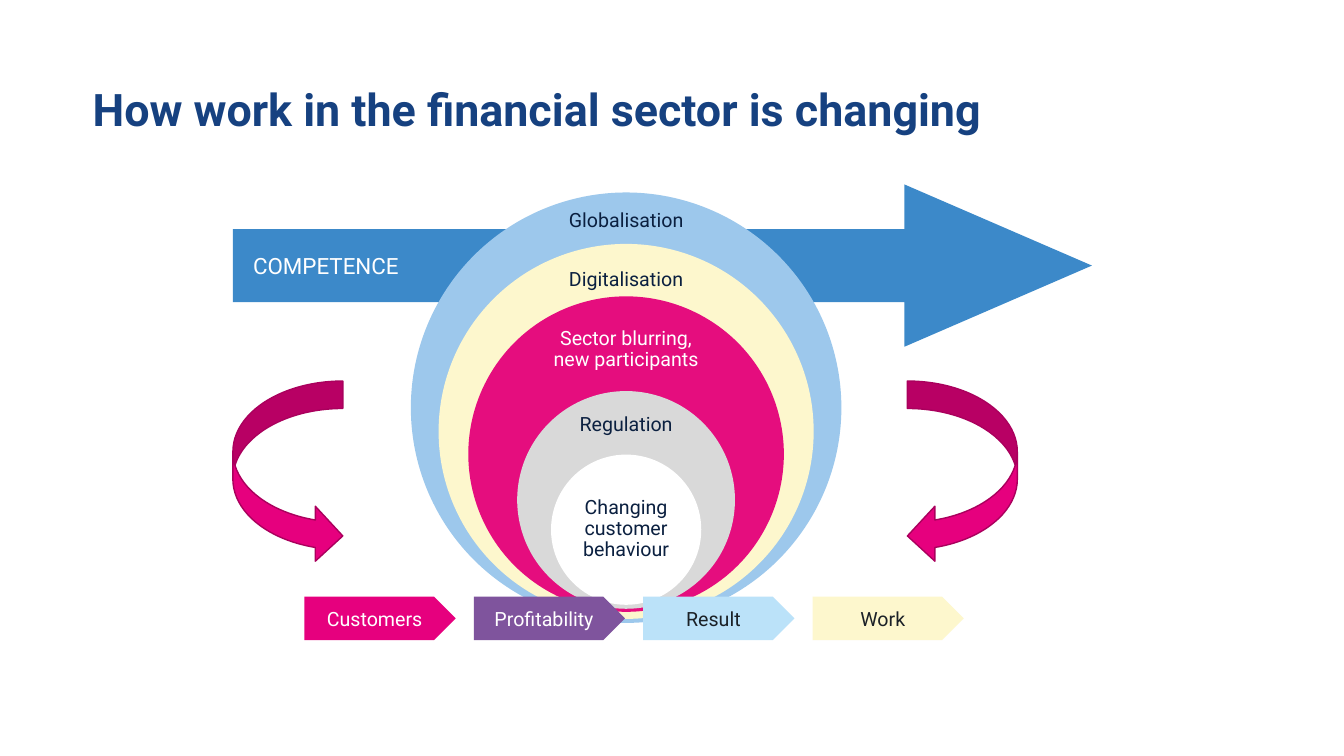
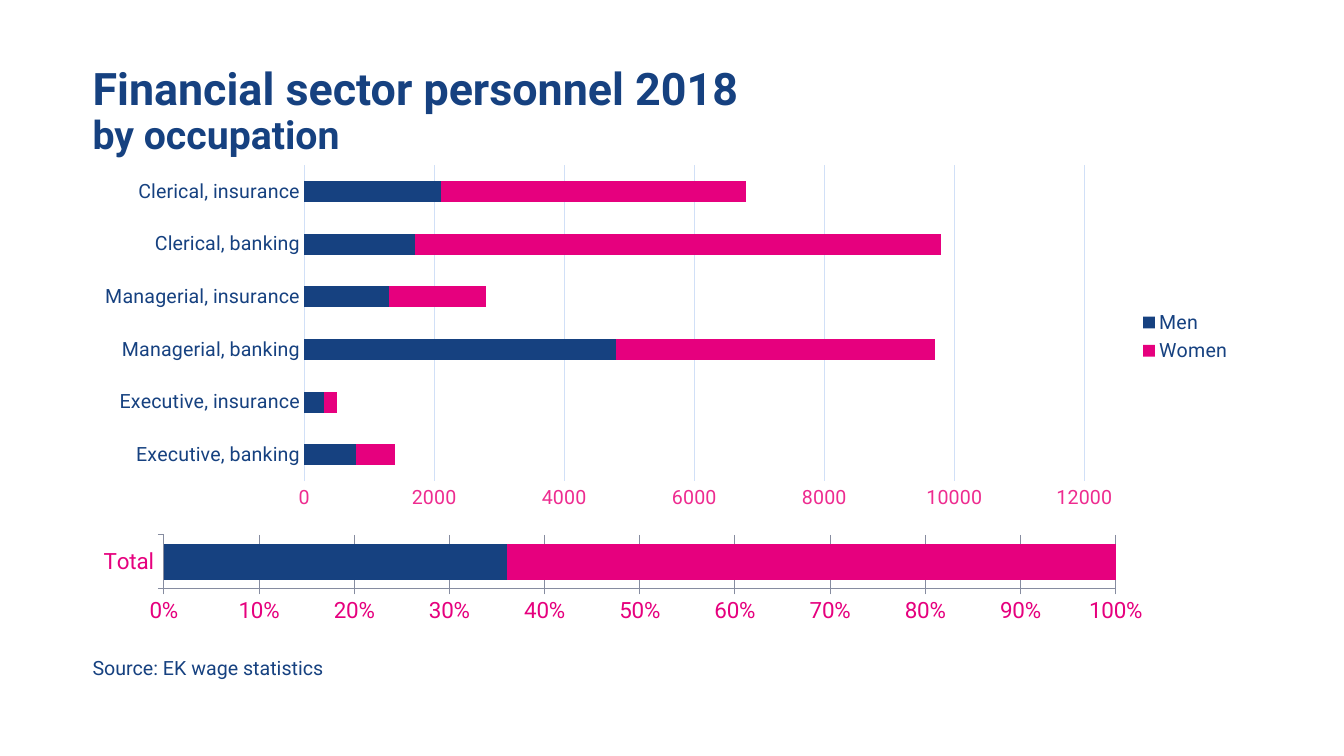
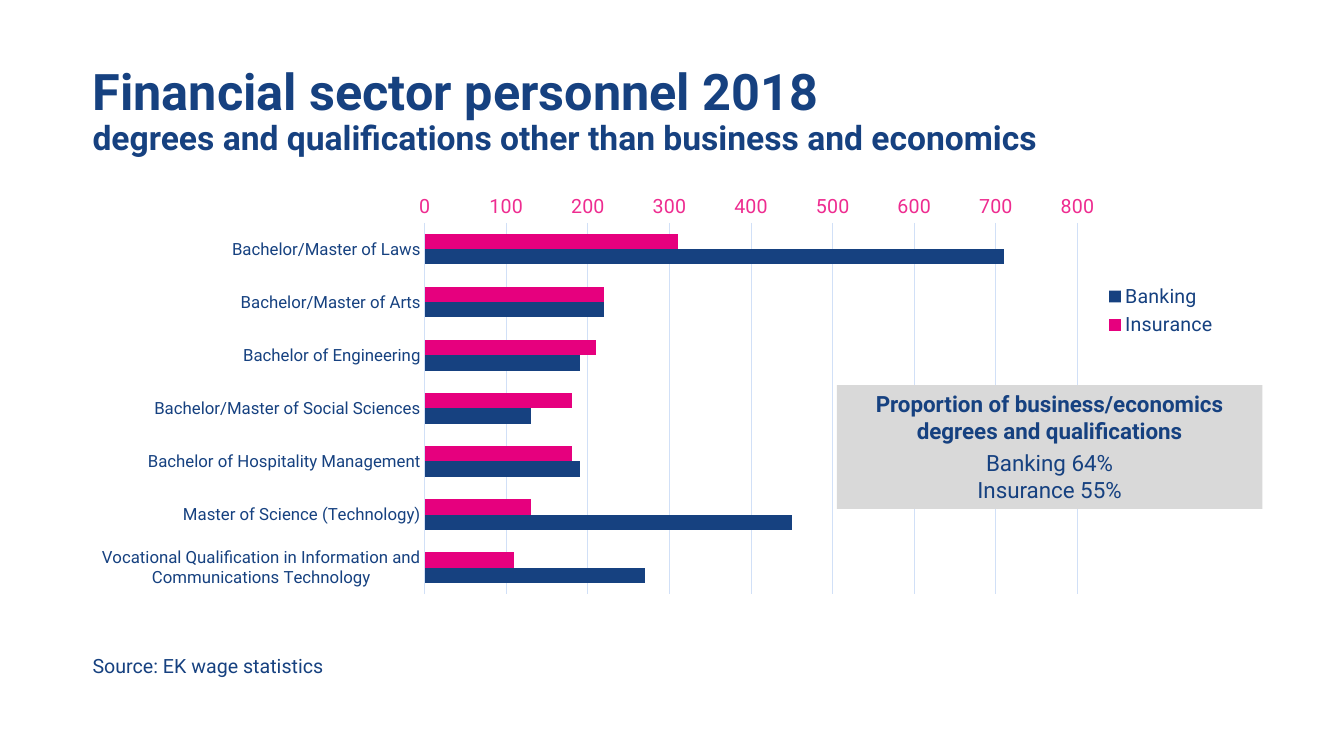
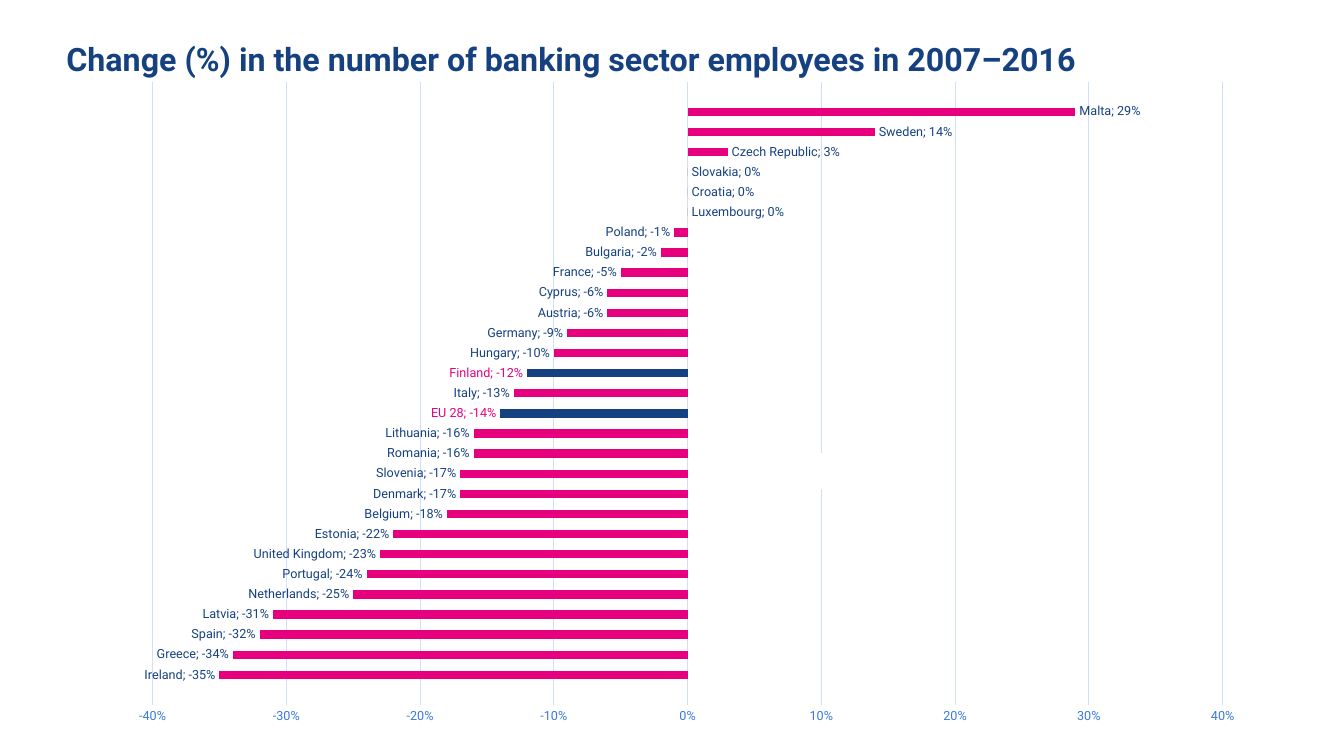
import pptx
import pptx.chart.data
import pptx.dml.color
import pptx.enum.chart
import pptx.enum.shapes
import pptx.enum.text
import pptx.oxml.xmlchemy
import pptx.util

Inches = pptx.util.Inches
Pt = pptx.util.Pt
RGBColor = pptx.dml.color.RGBColor
Shape = pptx.enum.shapes.MSO_SHAPE
Anchor = pptx.enum.text.MSO_ANCHOR
Align = pptx.enum.text.PP_ALIGN
ChartType = pptx.enum.chart.XL_CHART_TYPE
TickMark = pptx.enum.chart.XL_TICK_MARK
OUTSIDE_END = pptx.enum.chart.XL_LABEL_POSITION.OUTSIDE_END

# Shared style
FONT = "Roboto"
NAVY = RGBColor(0x16, 0x41, 0x80)
PINK = RGBColor(0xE6, 0x00, 0x7E)
DARK_PINK = RGBColor(0xAA, 0x00, 0x5D)
RING_PINK = RGBColor(0xE5, 0x0D, 0x7E)
AXIS_PINK = RGBColor(0xEE, 0x2C, 0x90)
AXIS_BLUE = RGBColor(0x37, 0x7A, 0xDD)
ARROW_BLUE = RGBColor(0x3C, 0x89, 0xC9)
SKY = RGBColor(0x9D, 0xC8, 0xEC)
PALE_BLUE = RGBColor(0xBB, 0xE2, 0xF9)
CREAM = RGBColor(0xFD, 0xF7, 0xCD)
PURPLE = RGBColor(0x7F, 0x54, 0x9D)
GREY = RGBColor(0xD9, 0xD9, 0xD9)
AXIS_GREY = RGBColor(0x86, 0x8C, 0xA0)
GRID = RGBColor(0xD1, 0xE0, 0xF7)
INK = RGBColor(0x0B, 0x20, 0x40)
BLACK = RGBColor(0x1B, 0x21, 0x27)
WHITE = RGBColor(0xFF, 0xFF, 0xFF)


def style_font(font, size, color, bold=False):
    font.name = FONT
    font.size = Pt(size)
    font.bold = bold
    font.color.rgb = color


def write_lines(paragraph, lines, color, align=Align.LEFT):
    """Write (text, size, bold) lines into one paragraph, with line breaks."""
    paragraph.alignment = align
    for index, (text, size, bold) in enumerate(lines):
        if index:
            paragraph.add_line_break()
        run = paragraph.add_run()
        run.text = text
        style_font(run.font, size, color, bold)


def add_text(slide, box, lines, color=NAVY, align=Align.LEFT,
             anchor=Anchor.TOP, spacing=1.0, inset=0.1):
    shape = slide.shapes.add_textbox(*map(Inches, box))
    frame = shape.text_frame
    frame.word_wrap = True
    frame.vertical_anchor = anchor
    frame.margin_left = frame.margin_right = Inches(inset)
    paragraph = frame.paragraphs[0]
    paragraph.line_spacing = spacing
    write_lines(paragraph, lines, color, align)


def add_title(slide, *lines, box=(0.82, 0.39, 11.5, 1.45)):
    add_text(slide, box, [(text, size, True) for text, size in lines],
             anchor=Anchor.MIDDLE, spacing=0.9)


def add_source(slide, top):
    add_text(slide, (0.82, top, 3, 0.34), [("Source: EK wage statistics", 14, False)])


def add_shape(slide, kind, box, fill, line=None):
    shape = slide.shapes.add_shape(kind, *map(Inches, box))
    shape.shadow.inherit = False
    shape.fill.solid()
    shape.fill.fore_color.rgb = fill
    if line is None:
        shape.line.fill.background()
    else:
        shape.line.color.rgb = line
        shape.line.width = Pt(1)
    return shape


# Charts
def add_xml_child(parent, tag, value):
    child = pptx.oxml.xmlchemy.OxmlElement(tag)
    child.set("val", str(value))
    parent.append(child)


def set_layout(element, position, fractions, inner=True):
    """Place a plot area or legend by fractions of the chart's size."""
    for old in element.xpath("c:layout"):
        element.remove(old)
    layout = pptx.oxml.xmlchemy.OxmlElement("c:layout")
    manual = pptx.oxml.xmlchemy.OxmlElement("c:manualLayout")
    layout.append(manual)
    if inner:
        add_xml_child(manual, "c:layoutTarget", "inner")
    for mode in ("xMode", "yMode"):
        add_xml_child(manual, "c:" + mode, "edge")
    for side, fraction in zip("xywh", fractions):
        add_xml_child(manual, "c:" + side, fraction)
    element.insert(position, layout)


def add_bar_chart(slide, kind, box, categories, series, plot_box, gap, overlap,
                  number_format="General"):
    """Add a bar chart; series holds (name, values, color)."""
    data = pptx.chart.data.CategoryChartData(number_format=number_format)
    data.categories = categories
    for name, values, _ in series:
        data.add_series(name, values)
    chart = slide.shapes.add_chart(kind, *map(Inches, box), data).chart
    chart.has_title = False
    chart.has_legend = False
    style_font(chart.font, 14, NAVY)
    plot = chart.plots[0]
    plot.vary_by_categories = False
    plot.gap_width = gap
    plot.overlap = overlap
    for drawn, (_, _, color) in zip(plot.series, series):
        drawn.invert_if_negative = False
        drawn.format.fill.solid()
        drawn.format.fill.fore_color.rgb = color
    set_layout(chart._chartSpace.xpath("c:chart/c:plotArea")[0], 0, plot_box)
    return chart


def style_axis(axis, size, color, line=None, tick=TickMark.NONE):
    axis.major_tick_mark = tick
    axis.minor_tick_mark = TickMark.NONE
    style_font(axis.tick_labels.font, size, color)
    if line is None:
        axis.format.line.fill.background()
    else:
        axis.format.line.color.rgb = line
        axis.format.line.width = Pt(0.75)


def style_value_axis(axis, size, color, step, limits=None, grid=GRID,
                     number_format="General", **style):
    style_axis(axis, size, color, **style)
    axis.major_unit = step
    if limits:
        axis.minimum_scale, axis.maximum_scale = limits
    axis.tick_labels.number_format = number_format
    axis.tick_labels.number_format_is_linked = False
    axis.has_major_gridlines = True
    axis.major_gridlines.format.line.color.rgb = grid
    axis.major_gridlines.format.line.width = Pt(0.75)


def add_legend(chart):
    chart.has_legend = True
    chart.legend.position = pptx.enum.chart.XL_LEGEND_POSITION.RIGHT
    chart.legend.include_in_layout = False
    style_font(chart.legend.font, 14, NAVY)
    return chart.legend


# Slide 1: nested rings of change
RING_CENTER = 6.21
RINGS = [  # label, top, diameter, label centre, label width, fill, text colour
    ("Globalisation", 1.91, 4.27, 2.19, 1.62, SKY, INK),
    ("Digitalisation", 2.42, 3.72, 2.78, 1.62, CREAM, INK),
    ("Sector blurring, new participants", 2.94, 3.13, 3.47, 1.62, RING_PINK, WHITE),
    ("Regulation", 3.88, 2.16, 4.22, 1.62, GREY, INK),
    ("Changing customer behaviour", 4.51, 1.49, 5.25, 1.01, WHITE, INK),
]
STEPS = [("Customers", PINK, WHITE), ("Profitability", PURPLE, WHITE),
         ("Result", PALE_BLUE, BLACK), ("Work", CREAM, BLACK)]


def add_ring(slide, label, top, diameter, label_center, label_width, fill, color):
    left = RING_CENTER - diameter / 2
    add_shape(slide, Shape.OVAL, (left, top, diameter, diameter), fill)
    add_text(slide, (RING_CENTER - label_width / 2, label_center - 0.4, label_width, 0.8),
             [(label, 14, False)], color, Align.CENTER, Anchor.MIDDLE, 0.9, 0)


def build_change_slide(slide):
    add_title(slide, ("How work in the financial sector is changing", 32))
    arrow = add_shape(slide, Shape.RIGHT_ARROW, (2.31, 1.83, 8.52, 1.61), ARROW_BLUE)
    arrow.adjustments[0] = 0.45
    arrow.adjustments[1] = 1.155
    arrow.text_frame.margin_left = Inches(0.2)
    write_lines(arrow.text_frame.paragraphs[0], [("COMPETENCE", 16, False)], WHITE)
    for ring in RINGS:
        add_ring(slide, *ring)
    for left, flipped in ((2.31, False), (9, True)):
        curve = add_shape(slide, Shape.CURVED_RIGHT_ARROW, (left, 3.78, 1.09, 1.81),
                          PINK, DARK_PINK)
        if flipped:
            curve._element.spPr.xfrm.set("flipH", "1")
    for index, (label, fill, color) in enumerate(STEPS):
        step = add_shape(slide, Shape.PENTAGON, (3.02 + 1.68 * index, 5.92, 1.5, 0.43), fill)
        write_lines(step.text_frame.paragraphs[0], [(label, 14, False)], color, Align.CENTER)


# Slide 2: personnel by occupation
OCCUPATIONS = ["Executive, banking", "Executive, insurance", "Managerial, banking",
               "Managerial, insurance", "Clerical, banking", "Clerical, insurance"]


def build_occupation_slide(slide):
    add_title(slide, ("Financial sector personnel 2018", 32), ("by occupation", 28))
    staff = add_bar_chart(
        slide, ChartType.BAR_STACKED, (0.82, 1.56, 11.5, 3.56), OCCUPATIONS,
        [("Men", (800, 300, 4800, 1300, 1700, 2100), NAVY),
         ("Women", (600, 200, 4900, 1500, 8100, 4700), PINK)],
        (0.191, 0.022, 0.673, 0.881), gap=150, overlap=100)
    style_axis(staff.category_axis, 14, NAVY, GRID)
    style_value_axis(staff.value_axis, 14, AXIS_PINK, 2000, (0, 12000))
    add_legend(staff)

    total = add_bar_chart(
        slide, ChartType.BAR_STACKED_100, (0.82, 5.29, 10.74, 0.92), ["Total"],
        [("Men", (36,), NAVY), ("Women", (64,), PINK)],
        (0.075, 0.019, 0.879, 0.577), gap=50, overlap=100)
    ticks = {"line": AXIS_GREY, "tick": TickMark.OUTSIDE}
    style_axis(total.category_axis, 16, PINK, **ticks)
    style_value_axis(total.value_axis, 16, PINK, 0.1, grid=AXIS_GREY,
                     number_format="0%", **ticks)
    add_source(slide, 6.46)


# Slide 3: personnel by degree
DEGREES = ["Bachelor/Master of Laws", "Bachelor/Master of Arts", "Bachelor of Engineering",
           "Bachelor/Master of Social Sciences", "Bachelor of Hospitality Management",
           "Master of Science (Technology)",
           "Vocational Qualification in Information and Communications Technology"]


def build_degree_slide(slide):
    add_title(slide, ("Financial sector personnel 2018", 36),
              ("degrees and qualifications other than business and economics", 24))
    chart = add_bar_chart(
        slide, ChartType.BAR_CLUSTERED, (0.82, 1.75, 11.5, 4.3), DEGREES,
        [("Insurance", (310, 220, 210, 180, 180, 130, 110), PINK),
         ("Banking", (710, 220, 190, 130, 190, 450, 270), NAVY)],
        (0.295, 0.107, 0.563, 0.857), gap=150, overlap=0)
    chart.category_axis.reverse_order = True
    style_axis(chart.category_axis, 12, NAVY, GRID)
    style_value_axis(chart.value_axis, 14, AXIS_PINK, 100, (0, 800))
    legend = add_legend(chart)
    set_layout(legend._element, 1, (0.875, 0.24, 0.11, 0.14), inner=False)
    add_source(slide, 6.44)

    # Note on business degrees
    note = add_shape(slide, Shape.RECTANGLE, (8.3, 3.82, 4.22, 1.23), GREY)
    frame = note.text_frame
    frame.word_wrap = True
    frame.vertical_anchor = Anchor.TOP
    heading = frame.paragraphs[0]
    heading.space_after = Pt(4)
    write_lines(heading, [("Proportion of business/economics degrees and qualifications",
                           16, True)], NAVY, Align.CENTER)
    write_lines(frame.add_paragraph(), [("Banking 64%", 16, False), ("Insurance 55%", 16, False)],
                NAVY, Align.CENTER)


# Slide 4: change by country, in percent
CHANGES = {
    "Ireland": -35, "Greece": -34, "Spain": -32, "Latvia": -31, "Netherlands": -25,
    "Portugal": -24, "United Kingdom": -23, "Estonia": -22, "Belgium": -18,
    "Denmark": -17, "Slovenia": -17, "Romania": -16, "Lithuania": -16, "EU 28": -14,
    "Italy": -13, "Finland": -12, "Hungary": -10, "Germany": -9, "Austria": -6,
    "Cyprus": -6, "France": -5, "Bulgaria": -2, "Poland": -1, "Luxembourg": 0,
    "Croatia": 0, "Slovakia": 0, "Czech Republic": 3, "Sweden": 14, "Malta": 29,
}
HIGHLIGHTS = ("EU 28", "Finland")


def label_bars(series, categories):
    """Label each bar with its category and value, and mark the highlights."""
    labels = series.data_labels
    style_font(labels.font, 9, NAVY)
    labels.number_format = "0%"
    labels.number_format_is_linked = False
    labels.position = OUTSIDE_END
    labels.show_value = True
    for name in HIGHLIGHTS:
        point = series.points[categories.index(name)]
        point.format.fill.solid()
        point.format.fill.fore_color.rgb = NAVY
        style_font(point.data_label.font, 9, PINK)
        point.data_label.position = OUTSIDE_END
    for show_category in series._element.xpath(".//c:showCatName"):
        show_category.set("val", "1")
    for show_bubble in series._element.xpath(".//c:showBubbleSize"):
        separator = pptx.oxml.xmlchemy.OxmlElement("c:separator")
        separator.text = "; "
        show_bubble.addnext(separator)


def build_country_slide(slide):
    add_title(slide, ("Change (%) in the number of banking sector employees in 2007–2016", 23),
              box=(0.56, 0.35, 12.59, 0.52))
    # An empty slot at each end keeps the bars off the plot's edges
    categories = ["", *CHANGES, ""]
    values = [None, *(change / 100 for change in CHANGES.values()), None]
    chart = add_bar_chart(
        slide, ChartType.BAR_CLUSTERED, (1.16, 0.71, 11.4, 6.68), categories,
        [("Change", values, PINK)], (0.031, 0.015, 0.931, 0.926),
        gap=142, overlap=0, number_format="0%")
    chart.category_axis.visible = False
    style_value_axis(chart.value_axis, 9, AXIS_BLUE, 0.1, (-0.4, 0.4), number_format="0%")
    label_bars(chart.plots[0].series[0], categories)
    add_shape(slide, Shape.RECTANGLE, (7.05, 4.5, 1.12, 0.34), WHITE, WHITE)


def main():
    presentation = pptx.Presentation()
    presentation.slide_width = Inches(13.33)
    presentation.slide_height = Inches(7.5)
    blank_layout = presentation.slide_layouts[6]
    for build in (build_change_slide, build_occupation_slide,
                  build_degree_slide, build_country_slide):
        build(presentation.slides.add_slide(blank_layout))
    presentation.save("out.pptx")


if __name__ == "__main__":
    main()
